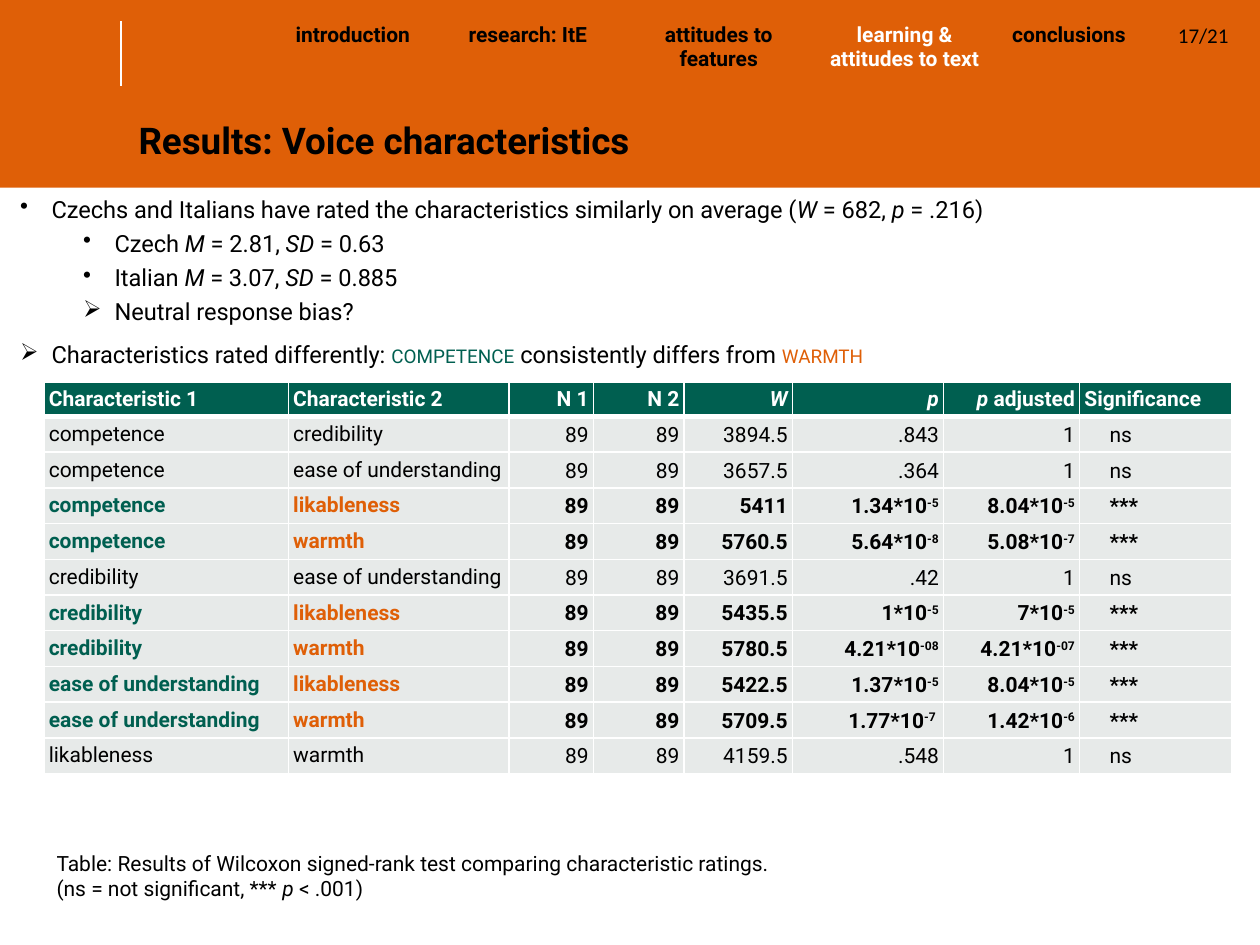
from dataclasses import dataclass

from pptx import Presentation
from pptx import util as u
from pptx.dml.color import RGBColor
from pptx.enum import shapes, text
from pptx.oxml.ns import qn
from lxml import etree

Inches = u.Inches
LEFT, CENTER, RIGHT = text.PP_ALIGN.LEFT, text.PP_ALIGN.CENTER, text.PP_ALIGN.RIGHT
PLAIN_TABLE_STYLE = "{2D5ABB26-0587-4C30-8999-92F81FD0307C}"


@dataclass(frozen=True)
class Theme:
    orange: str = "DF5F07"
    green: str = "005F50"
    grey: str = "E7EAE9"
    black: str = "000000"
    white: str = "FFFFFF"
    font: str = "Roboto"
    number_font: str = "Calibri"
    title: float = 21
    body: float = 13.5
    small: float = 12


THEME = Theme()

BULLETS = [  # level, bullet, spans
    (0, "•", ["Czechs and Italians have rated the characteristics similarly on average (",
              ("W", {"italic": True}), " = 682, ", ("p", {"italic": True}), " = .216)"]),
    (1, "•", ["Czech ", ("M ", {"italic": True}), "= 2.81, ", ("SD", {"italic": True}), " = 0.63"]),
    (1, "•", ["Italian ", ("M ", {"italic": True}), "= 3.07, ", ("SD ", {"italic": True}), "= 0.885"]),
    (1, "➢", ["Neutral response bias?"]),
    (0, "➢", ["Characteristics rated differently: ",
              ("competence", {"color": THEME.green, "cap": "small"}),
              " consistently differs from ",
              ("warmth", {"color": THEME.orange, "cap": "small"})]),
]

HEADINGS = [["Characteristic 1"], ["Characteristic 2"], ["N 1"], ["N 2"],
            [("W", {"italic": True})], [("p", {"italic": True})],
            [("p ", {"italic": True}), "adjusted"], ["Significance"]]
RESULTS = [  # characteristics, W, p, adjusted p; "^" starts an exponent
    ("competence", "credibility", "3894.5", ".843", "1"),
    ("competence", "ease of understanding", "3657.5", ".364", "1"),
    ("competence", "likableness", "5411", "1.34*10^-5", "8.04*10^-5"),
    ("competence", "warmth", "5760.5", "5.64*10^-8", "5.08*10^-7"),
    ("credibility", "ease of understanding", "3691.5", ".42", "1"),
    ("credibility", "likableness", "5435.5", "1*10^-5", "7*10^-5"),
    ("credibility", "warmth", "5780.5", "4.21*10^-08", "4.21*10^-07"),
    ("ease of understanding", "likableness", "5422.5", "1.37*10^-5", "8.04*10^-5"),
    ("ease of understanding", "warmth", "5709.5", "1.77*10^-7 ", "1.42*10^-6"),
    ("likableness", "warmth", "4159.5", ".548", "1"),
]
RESULT_WIDTHS = [1.94, 1.75, 0.67, 0.72, 0.86, 1.2, 1.08, 1.21]
SECTIONS = ["introduction", "research: ItE", "attitudes to features",
            "learning & attitudes to text", "conclusions"]
SECTION_WIDTHS = [1.5, 1.42, 1.47, 1.48, 1.13]
CURRENT_SECTION = 3


def add_spans(para, spans, **base):
    """Fill a paragraph with plain strings or (string, format) pairs."""
    for item in spans:
        words, extra = (item, {}) if isinstance(item, str) else item
        look = {"name": THEME.font, "size": THEME.small, "color": THEME.black, **base, **extra}
        span = para.add_run()
        span.text = words
        span.font.color.rgb = RGBColor.from_string(look.pop("color"))
        look["size"] = u.Pt(look["size"])
        for key in ("cap", "baseline"):
            if key in look:
                span.font._element.set(key, look.pop(key))
        for key, value in look.items():
            setattr(span.font, key, value)


def add_box(page, place, insets=(0, 0), anchor=text.MSO_ANCHOR.TOP):
    box = page.shapes.add_textbox(*map(Inches, place))
    side, end = map(Inches, insets)
    frame = box.text_frame
    layout = {"word_wrap": True, "vertical_anchor": anchor, "margin_left": side,
              "margin_right": side, "margin_top": end, "margin_bottom": end}
    for key, value in layout.items():
        setattr(frame, key, value)
    return frame


def add_bullets(frame):
    for index, (level, bullet, spans) in enumerate(BULLETS):
        para = frame.add_paragraph() if index else frame.paragraphs[0]
        para.level = level
        para.line_spacing = 0.9
        para.space_before = u.Pt((5 if level else 10) if index else 0)
        props = para._p.get_or_add_pPr()
        props.set("marL", str(Inches(0.25 + 0.5 * level)))
        props.set("indent", str(Inches(-0.25)))
        etree.SubElement(props, qn("a:buChar")).set("char", bullet)
        add_spans(para, spans, size=THEME.body)


def add_plain_table(page, place, widths, heights):
    frame = page.shapes.add_table(len(heights), len(widths), *map(Inches, place))
    table = frame.table
    table.first_row = table.horz_banding = False
    table._tbl.tblPr.find(qn("a:tableStyleId")).text = PLAIN_TABLE_STYLE
    for column, width in zip(table.columns, widths):
        column.width = Inches(width)
    for row, height in zip(table.rows, heights):
        row.height = Inches(height)
    return table


def set_borders(cell, bottom):
    props = cell._tc.get_or_add_tcPr()
    for index, (side, width) in enumerate([("L", 1), ("R", 1), ("T", 1), ("B", bottom)]):
        line = etree.Element(qn("a:ln" + side), w=str(u.Pt(width)))
        fill = etree.SubElement(line, qn("a:solidFill"))
        etree.SubElement(fill, qn("a:srgbClr")).set("val", THEME.white)
        props.insert(index, line)


def fill_result_cell(cell, spans, fill, align, bottom=1, **look):
    cell.fill.solid()
    cell.fill.fore_color.rgb = RGBColor.from_string(fill)
    set_borders(cell, bottom)
    cell.vertical_anchor = text.MSO_ANCHOR.MIDDLE
    for side in ("left", "right", "top", "bottom"):
        setattr(cell, "margin_" + side, u.Pt(2.7))
    para = cell.text_frame.paragraphs[0]
    para.alignment = align
    add_spans(para, spans, **look)
    return para


def add_results(page):
    table = add_plain_table(page, (0.35, 3.03, 9.43, 3.07), RESULT_WIDTHS,
                            [0.27] + [0.28] * len(RESULTS))
    aligns = [LEFT] * 2 + [RIGHT] * 5 + [LEFT]
    for column, spans in enumerate(HEADINGS):
        fill_result_cell(table.cell(0, column), spans, THEME.green, aligns[column],
                         bottom=3, color=THEME.white, bold=True)
    for row, (first, second, w, p, adjusted) in enumerate(RESULTS, 1):
        significant = "^" in p
        values = [first, second, "89", "89", w, p, adjusted, "***" if significant else "ns"]
        colors = [THEME.black] * len(values)
        if significant:
            colors[:2] = THEME.green, THEME.orange
        for column, value in enumerate(values):
            number, caret, exponent = value.partition("^")
            spans = [number] + ([(exponent, {"baseline": "30000"})] if caret else [])
            para = fill_result_cell(table.cell(row, column), spans, THEME.grey, aligns[column],
                                    color=colors[column], bold=significant)
            if column > 1:
                para.line_spacing = u.Pt(15)
        para._p.get_or_add_pPr().set("indent", str(Inches(0.2)))


def add_navigation(page):
    table = add_plain_table(page, (2.02, 0.13, 7, 0.5), SECTION_WIDTHS, [0.5])
    for index, name in enumerate(SECTIONS):
        cell = table.cell(0, index)
        cell.margin_right = Inches(0.18 if index == 1 else 0.04)
        para = cell.text_frame.paragraphs[0]
        para.alignment = CENTER
        add_spans(para, [name], bold=True,
                  color=THEME.white if index == CURRENT_SECTION else THEME.black)


def add_header_band(page):
    band = page.shapes.add_shape(shapes.MSO_SHAPE.RECTANGLE, 0, 0, Inches(10), Inches(1.49))
    band.shadow.inherit = False
    band.fill.solid()
    band.fill.fore_color.rgb = RGBColor.from_string(THEME.orange)
    band.line.fill.background()
    rule = page.shapes.add_connector(shapes.MSO_CONNECTOR.STRAIGHT,
                                     *map(Inches, (0.96, 0.17, 0.96, 0.68)))
    rule.line.color.rgb = RGBColor.from_string(THEME.white)
    rule.line.width = u.Pt(0.75)
    etree.SubElement(rule._element.spPr, qn("a:effectLst"))


def main():
    deck = Presentation()
    deck.slide_width, deck.slide_height = Inches(10), Inches(7.5)
    page = deck.slides.add_slide(deck.slide_layouts[6])

    # Header and title
    add_header_band(page)
    title = add_box(page, (1.1, 0.88, 8.74, 0.51), anchor=text.MSO_ANCHOR.MIDDLE).paragraphs[0]
    title.line_spacing = 0.9
    add_spans(title, ["Results: Voice characteristics"], size=THEME.title, bold=True)

    # Findings and test results
    add_bullets(add_box(page, (0.16, 1.57, 9.68, 3.57)))
    add_results(page)

    # Table caption
    caption = add_box(page, (0.35, 6.7, 9.05, 0.5), (0.1, 0.05))
    add_spans(caption.paragraphs[0],
              ["Table: Results of Wilcoxon signed-rank test comparing characteristic ratings."])
    add_spans(caption.add_paragraph(),
              ["(ns = not significant, *** ", ("p", {"italic": True}), " < .001)"])

    # Section navigation and page number
    add_navigation(page)
    number = add_box(page, (9.25, 0.13, 0.75, 0.31), (0.1, 0.05))
    add_spans(number.paragraphs[0], ["17/21"], name=THEME.number_font)

    deck.save("out.pptx")


if __name__ == "__main__":
    main()
